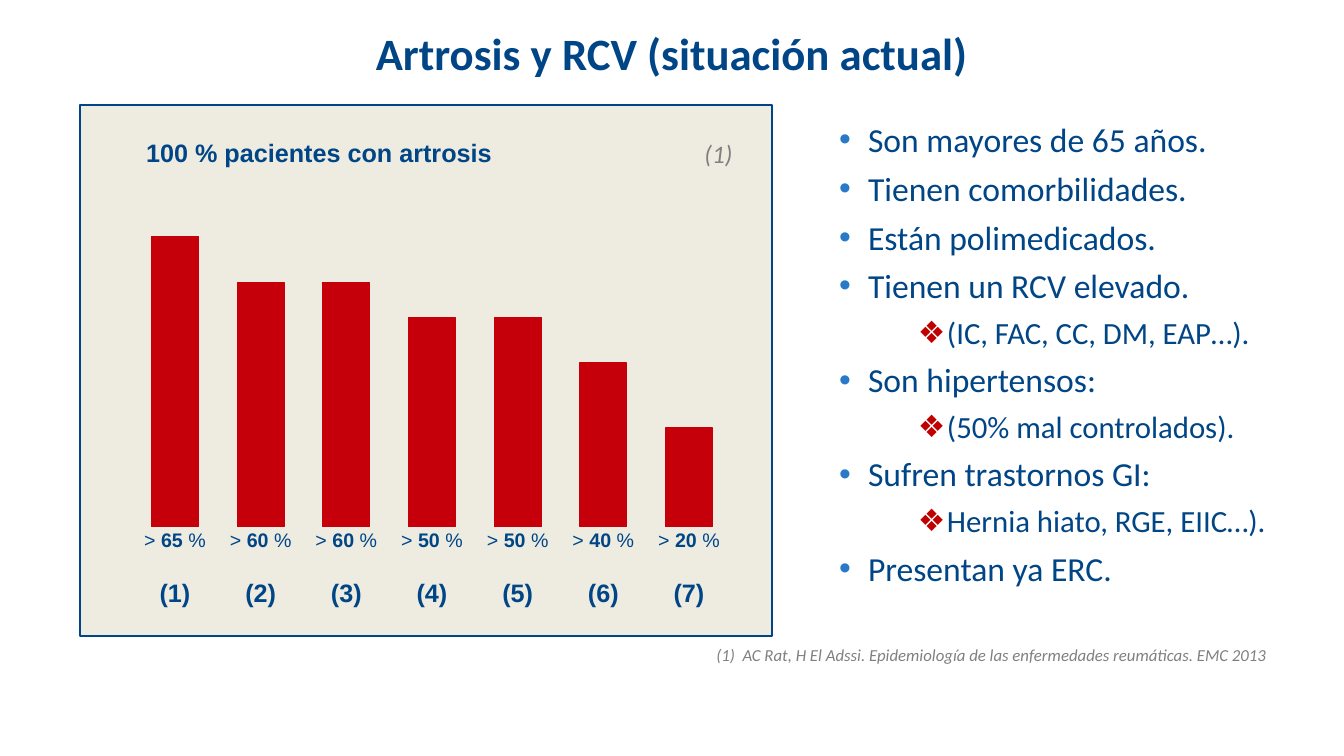
import pptx
import pptx.util
import pptx.dml.color
import pptx.enum.shapes
import pptx.enum.text
import lxml.etree

RGBColor = pptx.dml.color.RGBColor
ALIGN = pptx.enum.text.PP_ALIGN
ANCHOR = pptx.enum.text.MSO_ANCHOR

NAVY = RGBColor(0x00, 0x45, 0x86)
RED = RGBColor(0xC5, 0x00, 0x0B)
CREAM = RGBColor(0xEE, 0xEC, 0xE1)
GRAY = RGBColor(0x80, 0x80, 0x80)
BULLET_BLUE = RGBColor(0x28, 0x7A, 0xC8)
BULLET_RED = RGBColor(0xC0, 0x00, 0x00)

TITLE = "Artrosis y RCV (situación actual)"
CHART_TITLE = "100 % pacientes con artrosis"
CITATION_MARK = "(1)"
CITATION = "(1)  AC Rat, H El Adssi. Epidemiología de las enfermedades reumáticas. EMC 2013"
BARS = [("65", 290), ("60", 244), ("60", 244), ("50", 209), ("50", 209), ("40", 164), ("20", 99)]
POINTS = [
    (0, "Son mayores de 65 años."),
    (0, "Tienen comorbilidades."),
    (0, "Están polimedicados."),
    (0, "Tienen un RCV elevado."),
    (1, "(IC, FAC, CC, DM, EAP…)."),
    (0, "Son hipertensos:"),
    (1, "(50% mal controlados)."),
    (0, "Sufren trastornos GI:"),
    (1, "Hernia hiato, RGE, EIIC…)."),
    (0, "Presentan ya ERC."),
]
LEVELS = [("•", BULLET_BLUE, 24, 89), ("❖", BULLET_RED, 22, 168)]
HANGING = 29

FIRST_CENTER, LAST_CENTER, BAR_WIDTH, BASELINE = 175, 689, 47, 527
LABEL_WIDTH = 84


def px(length):
    return pptx.util.Emu(round(length * 914400 / 100.8))


def add_rectangle(left, top, width, height, fill, line, weight):
    shape = page.shapes.add_shape(
        pptx.enum.shapes.MSO_SHAPE.RECTANGLE, px(left), px(top), px(width), px(height))
    shape.shadow.inherit = False
    shape.fill.solid()
    shape.fill.fore_color.rgb = fill
    shape.line.color.rgb = line
    shape.line.width = pptx.util.Pt(weight)


def format_font(font, size, name, color, bold=False, italic=False):
    font.size = pptx.util.Pt(size)
    font.name = name
    font.color.rgb = color
    font.bold = bold
    font.italic = italic


def add_box(left, top, width, height, anchor=ANCHOR.TOP, inset=10):
    frame = page.shapes.add_textbox(px(left), px(top), px(width), px(height)).text_frame
    frame.word_wrap = True
    frame.vertical_anchor = anchor
    frame.margin_left = frame.margin_right = px(inset)
    frame.margin_top = frame.margin_bottom = px(inset)
    return frame


def add_text(frame, spans, align, size, name, color, italic=False):
    para = frame.paragraphs[0]
    para.alignment = align
    for text, bold in spans:
        span = para.add_run()
        span.text = text
        format_font(span.font, size, name, color, bold, italic)


def add_bullet(para, level):
    symbol, color, size, indent = LEVELS[level]
    properties = para._p.get_or_add_pPr()
    properties.set("marL", str(px(indent)))
    properties.set("indent", str(-px(HANGING)))
    qn = pptx.oxml.ns.qn
    bullet_color = lxml.etree.SubElement(properties, qn("a:buClr"))
    lxml.etree.SubElement(bullet_color, qn("a:srgbClr")).set("val", str(color))
    lxml.etree.SubElement(properties, qn("a:buFont")).set("typeface", "Arial")
    lxml.etree.SubElement(properties, qn("a:buChar")).set("char", symbol)


deck = pptx.Presentation()
deck.slide_width, deck.slide_height = px(1344), px(756)
page = deck.slides.add_slide(deck.slide_layouts[6])

add_text(add_box(67, 20, 1210, 66, ANCHOR.MIDDLE), [(TITLE, True)],
         ALIGN.CENTER, 32, "Calibri", NAVY)
add_text(add_box(0, 635, 1277, 32), [(CITATION, False)],
         ALIGN.RIGHT, 12, "Calibri", GRAY, True)

add_rectangle(80, 105, 692, 531, CREAM, NAVY, 1.5)
add_text(add_box(136, 127, 500, 48), [(CHART_TITLE, True)], ALIGN.LEFT, 18, "Arial", NAVY)
add_text(add_box(687, 129, 63, 48, ANCHOR.MIDDLE), [(CITATION_MARK, False)],
         ALIGN.CENTER, 18, "Calibri", GRAY, True)

pitch = (LAST_CENTER - FIRST_CENTER) / (len(BARS) - 1)
for index, (percent, height) in enumerate(BARS):
    center = FIRST_CENTER + index * pitch
    add_rectangle(center - BAR_WIDTH / 2, BASELINE - height, BAR_WIDTH, height, RED, RED, 0.75)
    label_rows = [
        (540, 14, [("> ", False), (percent, True), (" %", False)]),
        (592, 18, [(f"({index + 1})", True)]),
    ]
    for middle, size, spans in label_rows:
        frame = add_box(center - LABEL_WIDTH / 2, middle - 15, LABEL_WIDTH, 30, ANCHOR.MIDDLE, 0)
        add_text(frame, spans, ALIGN.CENTER, size, "Arial", NAVY)

points_frame = add_box(769, 109, 560, 506)
points_frame.text = "\n".join(text for level, text in POINTS)
for index, (para, (level, text)) in enumerate(zip(points_frame.paragraphs, POINTS)):
    para.level = level
    if index:
        para.space_before = pptx.util.Pt(6)
    add_bullet(para, level)
    format_font(para.runs[0].font, LEVELS[level][2], "Calibri", NAVY)

deck.save("out.pptx")
